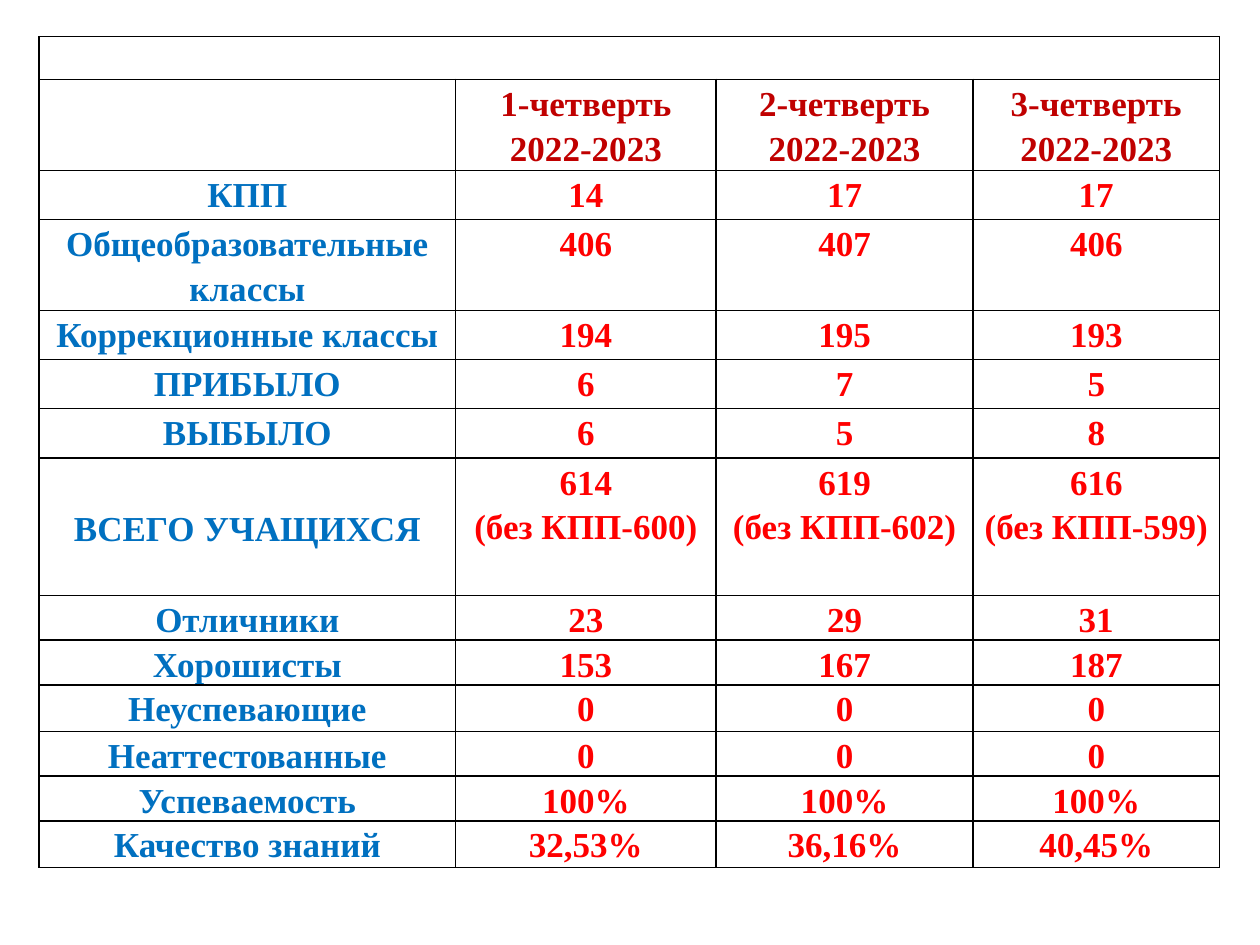
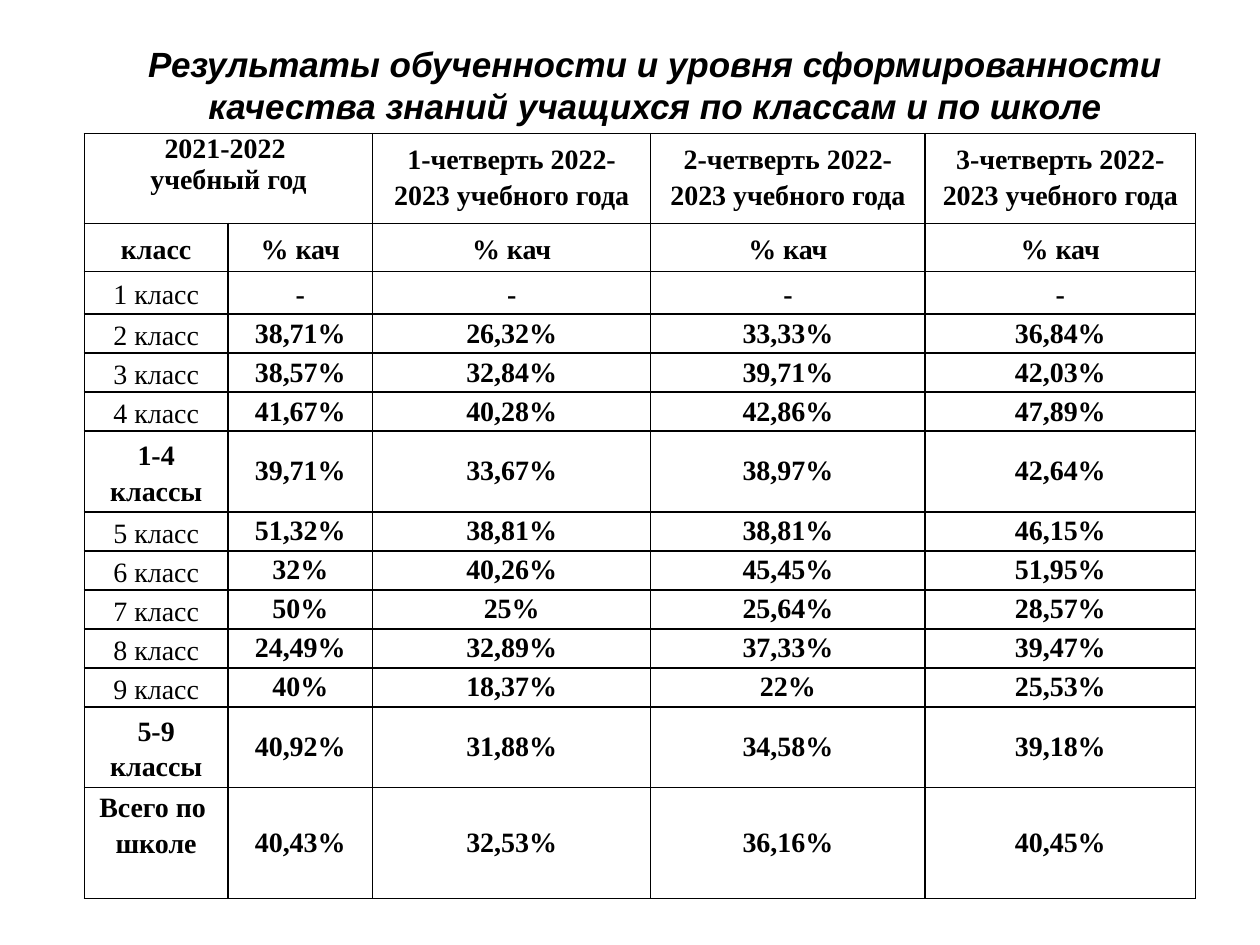
"""Build two slides of school results: pupil counts by quarter and quality by class."""
import dataclasses
import typing

import lxml.etree
import pptx
import pptx.dml.color
import pptx.enum.text
import pptx.oxml.ns
import pptx.presentation
import pptx.slide
import pptx.table
import pptx.text.text
import pptx.util

ANCHOR = pptx.enum.text.MSO_ANCHOR
COLUMNS, ROWS = 1000, 750


@dataclasses.dataclass(frozen=True)
class Theme:
    """Colours, fonts, type sizes and line widths shared by the slides."""
    black: str = "000000"
    heading: str = "C00000"
    label: str = "0070C0"
    figure: str = "FF0000"
    table_font: str = "Times New Roman"
    title_font: str = "Arial"
    large: int = 20
    small: int = 16
    spacing: float = 1.15
    border: float = 1


THEME = Theme()


class Box(typing.NamedTuple):
    """A rectangle in columns and rows of the slide grid."""
    left: int
    top: int
    width: int
    height: int


@dataclasses.dataclass(frozen=True)
class TextStyle:
    """Look of a text and its place within its frame."""
    size: int = THEME.small
    color: str = THEME.black
    font: str = THEME.table_font
    bold: bool = True
    italic: bool = False
    spacing: float = THEME.spacing
    anchor: ANCHOR = ANCHOR.MIDDLE
    side_margin: float = 0.07
    end_margin: float = 0


@dataclasses.dataclass(frozen=True)
class TablePlan:
    """Place, proportions, texts and styles of one table."""
    box: Box
    widths: list[int]
    heights: list[int]
    texts: list[list[str]]
    style: typing.Callable[[int, int], TextStyle]
    merged: int


QUARTER_COLOURS = TextStyle(THEME.large, THEME.figure, anchor=ANCHOR.TOP)
QUARTER_HEADING = dataclasses.replace(QUARTER_COLOURS, color=THEME.heading)
QUARTER_LABEL = dataclasses.replace(QUARTER_COLOURS, color=THEME.label)
TITLE = TextStyle(THEME.large, font=THEME.title_font, italic=True, spacing=1,
                  anchor=ANCHOR.TOP, side_margin=0.1, end_margin=0.05)
CLASS_HEADING = TextStyle()
CLASS_YEAR = TextStyle(spacing=1, anchor=ANCHOR.TOP)
CLASS_QUARTER = TextStyle(anchor=ANCHOR.TOP, side_margin=0.1, end_margin=0.05)
CLASS_LABEL = TextStyle(bold=False)
CLASS_FIGURE = TextStyle(spacing=1, side_margin=0.01)
CLASS_TOTAL = TextStyle(anchor=ANCHOR.TOP)

PUPIL_TEXTS = [
    ["", "", "", ""],
    ["", "1-четверть 2022-2023", "2-четверть 2022-2023", "3-четверть 2022-2023"],
    ["КПП", "14", "17", "17"],
    ["Общеобразовательные классы", "406", "407", "406"],
    ["Коррекционные классы", "194", "195", "193"],
    ["ПРИБЫЛО", "6", "7", "5"],
    ["ВЫБЫЛО", "6", "5", "8"],
    ["ВСЕГО УЧАЩИХСЯ", "614\n(без КПП-600)", "619\n(без КПП-602)", "616\n(без КПП-599)"],
    ["Отличники", "23", "29", "31"],
    ["Хорошисты", "153", "167", "187"],
    ["Неуспевающие", "0", "0", "0"],
    ["Неаттестованные", "0", "0", "0"],
    ["Успеваемость", "100%", "100%", "100%"],
    ["Качество знаний", "32,53%", "36,16%", "40,45%"],
]
CLASS_TEXTS = [
    ["2021-2022 \nучебный год", "",
     *(f"{quarter}-четверть 2022-2023 учебного года" for quarter in (1, 2, 3))],
    ["класс", *["% кач"] * 4],
    ["1 класс", *["-"] * 4],
    ["2 класс", "38,71%", "26,32%", "33,33%", "36,84%"],
    ["3 класс", "38,57%", "32,84%", "39,71%", "42,03%"],
    ["4 класс", "41,67%", "40,28%", "42,86%", "47,89%"],
    ["1-4 классы", "39,71%", "33,67%", "38,97%", "42,64%"],
    ["5 класс", "51,32%", "38,81%", "38,81%", "46,15%"],
    ["6 класс", "32%", "40,26%", "45,45%", "51,95%"],
    ["7 класс", "50%", "25%", "25,64%", "28,57%"],
    ["8 класс", "24,49%", "32,89%", "37,33%", "39,47%"],
    ["9 класс", "40%", "18,37%", "22%", "25,53%"],
    ["5-9 классы", "40,92%", "31,88%", "34,58%", "39,18%"],
    ["Всего по \nшколе", "40,43%", "32,53%", "36,16%", "40,45%"],
]


def pupil_style(row: int, column: int) -> TextStyle:
    """Choose the style of a cell in the table of pupils."""
    if row < 2:
        return QUARTER_HEADING
    if column:
        return QUARTER_COLOURS
    if PUPIL_TEXTS[row][0] == "ВСЕГО УЧАЩИХСЯ":
        return dataclasses.replace(QUARTER_LABEL, anchor=ANCHOR.MIDDLE)
    return QUARTER_LABEL


def class_style(row: int, column: int) -> TextStyle:
    """Choose the style of a cell in the table of classes."""
    if row == 0:
        return CLASS_QUARTER if column > 1 else CLASS_YEAR
    if column:
        return CLASS_FIGURE if row > 2 else CLASS_HEADING
    if row == len(CLASS_TEXTS) - 1:
        return CLASS_TOTAL
    return CLASS_LABEL if CLASS_TEXTS[row][0].endswith(" класс") else CLASS_HEADING


PUPILS = TablePlan(Box(31, 29, 937, 658), [331, 207, 204, 196],
                   [34, 72, 39, 72, 39, 39, 39, 109, 35, 35, 37, 35, 35, 37],
                   PUPIL_TEXTS, pupil_style, merged=4)
CLASSES = TablePlan(Box(67, 106, 882, 603), [114, 115, 221, 218, 215],
                    [67, 38, 34, *[31] * 3, 64, *[31] * 5, 64, 88],
                    CLASS_TEXTS, class_style, merged=2)


def place(presentation: pptx.presentation.Presentation, box: Box) -> list[int]:
    """Turn a grid box into lengths on the slide."""
    column = presentation.slide_width / COLUMNS
    row = presentation.slide_height / ROWS
    return [round(part * unit) for part, unit in zip(box, (column, row) * 2)]


def write(frame: pptx.text.text.TextFrame, text: str, style: TextStyle) -> None:
    """Write centred lines in a frame, one paragraph each."""
    frame.text = text
    for paragraph in frame.paragraphs:
        paragraph.alignment = pptx.enum.text.PP_ALIGN.CENTER
        paragraph.line_spacing = style.spacing
        font = paragraph.font
        font.name, font.size = style.font, pptx.util.Pt(style.size)
        font.bold, font.italic = style.bold, style.italic
        font.color.rgb = pptx.dml.color.RGBColor.from_string(style.color)


def set_margins(holder: typing.Any, style: TextStyle) -> None:
    """Set the inner margins and anchor of a cell or text frame."""
    holder.margin_left = holder.margin_right = pptx.util.Inches(style.side_margin)
    holder.margin_top = holder.margin_bottom = pptx.util.Inches(style.end_margin)
    holder.vertical_anchor = style.anchor


def add_borders(cell: pptx.table._Cell) -> None:
    """Draw a thin line on all four sides of a cell."""
    properties = cell._tc.get_or_add_tcPr()
    qualified = pptx.oxml.ns.qn
    for position, side in enumerate(("a:lnL", "a:lnR", "a:lnT", "a:lnB")):
        line = lxml.etree.Element(qualified(side), w=str(pptx.util.Pt(THEME.border)))
        fill = lxml.etree.SubElement(line, qualified("a:solidFill"))
        lxml.etree.SubElement(fill, qualified("a:srgbClr"), val=THEME.black)
        properties.insert(position, line)


def add_table(presentation: pptx.presentation.Presentation,
              slide: pptx.slide.Slide, plan: TablePlan) -> None:
    """Add a plain ruled table whose first cells are merged."""
    left, top, width, height = place(presentation, plan.box)
    table = slide.shapes.add_table(len(plan.heights), len(plan.widths),
                                   left, top, width, height).table
    table.first_row = table.horz_banding = False
    for column, share in zip(table.columns, plan.widths):
        column.width = round(width * share / sum(plan.widths))
    for row, share in zip(table.rows, plan.heights):
        row.height = round(height * share / sum(plan.heights))
    for row_index, texts in enumerate(plan.texts):
        for column_index, text in enumerate(texts):
            cell = table.cell(row_index, column_index)
            style = plan.style(row_index, column_index)
            write(cell.text_frame, text, style)
            set_margins(cell, style)
            cell.fill.background()
            add_borders(cell)
    table.cell(0, 0).merge(table.cell(0, plan.merged - 1))


def add_title(presentation: pptx.presentation.Presentation,
              slide: pptx.slide.Slide, text: str, box: Box) -> None:
    """Place and format the title of a slide."""
    title = slide.shapes.title
    title.left, title.top, title.width, title.height = place(presentation, box)
    frame = title.text_frame
    write(frame, text, TITLE)
    set_margins(frame, TITLE)
    frame.word_wrap = True
    frame.auto_size = pptx.enum.text.MSO_AUTO_SIZE.SHAPE_TO_FIT_TEXT


def main() -> None:
    """Build and save the presentation."""
    presentation = pptx.Presentation()
    presentation.slide_width = pptx.util.Inches(10)
    presentation.slide_height = pptx.util.Inches(7.5)
    layouts = presentation.slide_layouts
    pupils_slide = presentation.slides.add_slide(layouts.get_by_name("Blank"))
    add_table(presentation, pupils_slide, PUPILS)
    classes_slide = presentation.slides.add_slide(layouts.get_by_name("Title Only"))
    add_title(presentation, classes_slide,
              "Результаты обученности и уровня сформированности "
              "качества знаний учащихся по классам и по школе",
              Box(67, 29, 906, 77))
    add_table(presentation, classes_slide, CLASSES)
    presentation.save("out.pptx")


if __name__ == "__main__":
    main()
